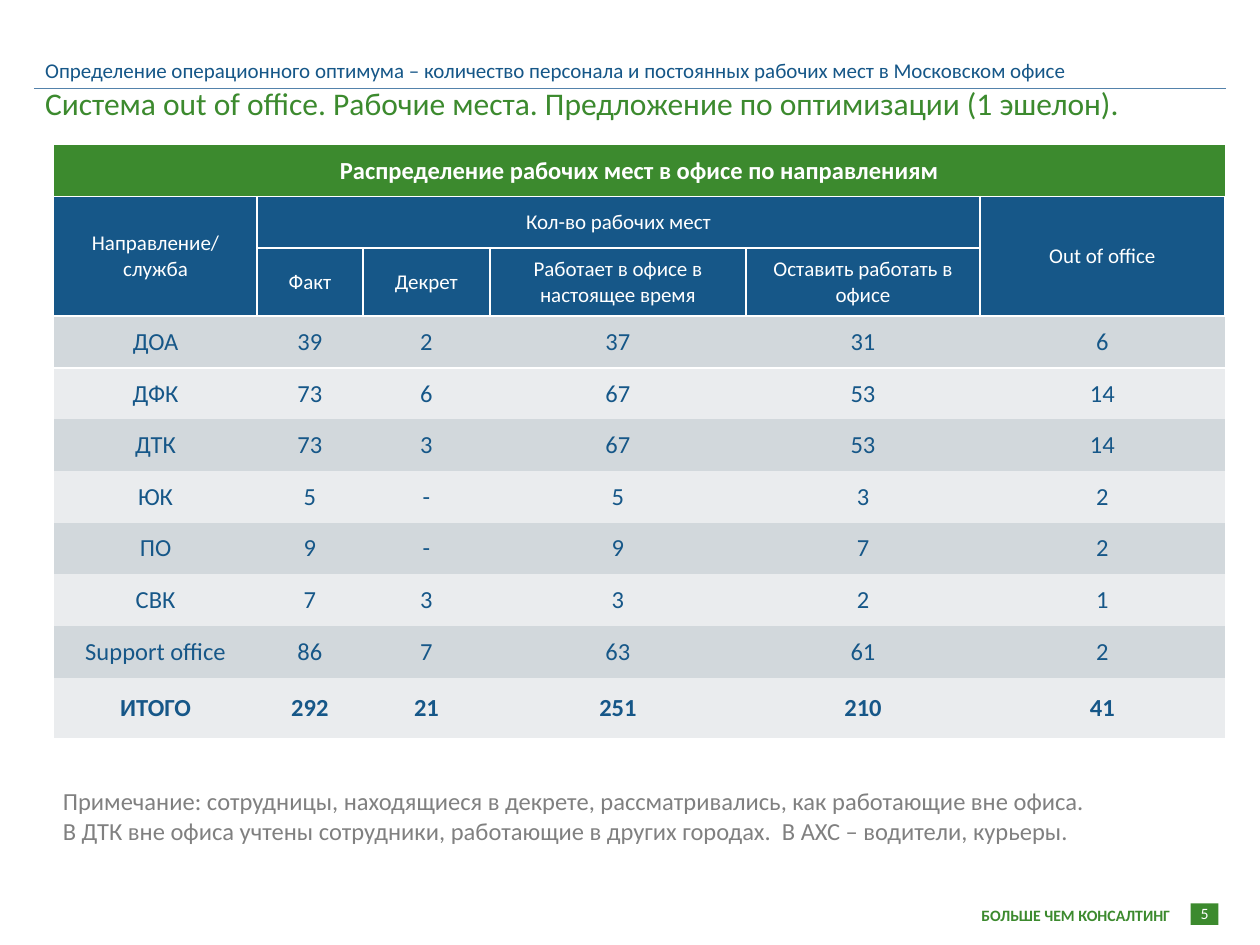
from lxml import etree
from pptx import Presentation, util as u
from pptx.dml.color import RGBColor
from pptx.enum import shapes, text
from pptx.oxml.ns import qn

THEME = {
    "font": "Calibri",
    "green": "3C8A2E", "blue": "165788", "rule": "5482AB", "grey": "808080",
    "white": "FFFFFF", "bands": ("D2D8DC", "EAECEE"),
    "title": 18, "body": 14, "label": 12, "foot": 9,
}
PLAIN = "{2D5ABB26-0587-4C30-8999-92F81FD0307C}"  # table style without grid

TOPIC = ("Определение операционного оптимума – количество персонала "
         "и постоянных рабочих мест в Московском офисе")
TITLE = "Система out of office. Рабочие места. Предложение по оптимизации (1 эшелон)."
NOTE = [
    "Примечание: сотрудницы, находящиеся в декрете, рассматривались, как работающие вне офиса.",
    "В ДТК вне офиса учтены сотрудники, работающие в других городах.  В АХС – водители, курьеры.",
]
SLOGAN = "БОЛЬШЕ ЧЕМ КОНСАЛТИНГ"
PAGE = "5"

COLS = [1.61, 0.84, 1.01, 2.03, 1.86, 1.94]
ROWS = [0.41, 0.41, 0.54] + [0.41] * 7 + [0.48]
HEAD = [
    ["Распределение рабочих мест в офисе по направлениям"] + [""] * 5,
    ["Направление/служба", "Кол-во рабочих мест", "", "", "", "Out of office"],
    ["", "Факт", "Декрет", "Работает в офисе в настоящее время",
     "Оставить работать в офисе", ""],
]
SPANS = [((0, 0), (0, 5)), ((1, 0), (2, 0)), ((1, 1), (1, 4)), ((1, 5), (2, 5))]
DATA = [
    ["ДОА", "39", "2", "37", "31", "6"],
    ["ДФК", "73", "6", "67", "53", "14"],
    ["ДТК", "73", "3", "67", "53", "14"],
    ["ЮК", "5", "-", "5", "3", "2"],
    ["ПО", "9", "-", "9", "7", "2"],
    ["СВК", "7", "3", "3", "2", "1"],
    ["Support office", "86", "7", "63", "61", "2"],
    ["ИТОГО", "292", "21", "251", "210", "41"],
]


def color(name):
    return RGBColor.from_string(THEME.get(name, name))


def write(frame, lines, size, tint, bold=False, align=text.PP_ALIGN.LEFT):
    for i, line in enumerate(lines):
        para = frame.add_paragraph() if i else frame.paragraphs[0]
        para.alignment = align
        run = para.add_run()
        run.text = line
        run.font.name = THEME["font"]
        run.font.size = u.Pt(THEME[size])
        run.font.bold = bold
        run.font.color.rgb = color(tint)


def add_text(slide, box, lines, size, tint, wrap=True, mid=False, **look):
    frame = slide.shapes.add_textbox(*map(u.Inches, box)).text_frame
    frame.word_wrap = wrap
    if mid:
        frame.vertical_anchor = text.MSO_ANCHOR.MIDDLE
    write(frame, lines, size, tint, **look)


def add_edge(cell, side):
    """Draw a white 1 pt border; call before the cell gets its fill."""
    props = cell._tc.get_or_add_tcPr()
    line = etree.SubElement(props, qn("a:ln" + side), w=str(u.Pt(1)))
    fill = etree.SubElement(line, qn("a:solidFill"))
    etree.SubElement(fill, qn("a:srgbClr"), val=THEME["white"])


def style(row):
    """Return fill, type size, type colour and weight of a table row."""
    if row == 0:
        return "green", "body", "white", True
    if row < len(HEAD):
        return "blue", "label", "white", False
    band = THEME["bands"][(row - len(HEAD)) % 2]
    return band, "body", "blue", row == len(ROWS) - 1


def add_grid(slide):
    size = (0.43, 1.15, sum(COLS), sum(ROWS))
    frame = slide.shapes.add_table(len(ROWS), len(COLS), *map(u.Inches, size))
    table = frame.table
    table._tbl.tblPr.find(qn("a:tableStyleId")).text = PLAIN
    table.first_row = table.horz_banding = False
    for col, width in zip(table.columns, COLS):
        col.width = u.Inches(width)
    for row, height in zip(table.rows, ROWS):
        row.height = u.Inches(height)
    for start, end in SPANS:
        table.cell(*start).merge(table.cell(*end))
    for r, words in enumerate(HEAD + DATA):
        fill, size, tint, bold = style(r)
        for c, word in enumerate(words):
            cell = table.cell(r, c)
            if cell.is_spanned:
                continue
            if c and 0 < r < len(HEAD):
                add_edge(cell, "L")
            if 0 < r <= len(HEAD):
                add_edge(cell, "T")
            cell.fill.solid()
            cell.fill.fore_color.rgb = color(fill)
            cell.vertical_anchor = text.MSO_ANCHOR.MIDDLE
            write(cell.text_frame, [word], size, tint, bold, text.PP_ALIGN.CENTER)


def add_frame(slide):
    """Add the page badge, the header rule and the slogan."""
    box = map(u.Inches, (9.45, 7.17, 0.22, 0.17))
    badge = slide.shapes.add_shape(shapes.MSO_SHAPE.RECTANGLE, *box)
    badge.shadow.inherit = False
    badge.fill.solid()
    badge.fill.fore_color.rgb = color("green")
    badge.line.fill.background()

    ends = map(u.Inches, (0.27, 0.7, 9.73, 0.7))
    rule = slide.shapes.add_connector(shapes.MSO_CONNECTOR.STRAIGHT, *ends)
    rule.line.color.rgb = color("rule")
    rule.line.width = u.Pt(0.5)
    etree.SubElement(rule._element.spPr, qn("a:effectLst"))

    add_text(slide, (7.69, 7.14, 1.72, 0.25), [SLOGAN], "foot", "green",
             wrap=False, bold=True)
    add_text(slide, (9.34, 7.05, 0.44, 0.4), [PAGE], "foot", "white",
             mid=True, align=text.PP_ALIGN.CENTER)


def main():
    deck = Presentation()
    deck.slide_width, deck.slide_height = u.Inches(10), u.Inches(7.5)
    slide = deck.slides.add_slide(deck.slide_layouts[6])
    add_frame(slide)
    add_text(slide, (0.26, 0.62, 9.45, 0.47), [TITLE], "title", "green")
    add_text(slide, (0.26, 0.41, 9.45, 0.47), [TOPIC], "label", "blue")
    add_grid(slide)
    add_text(slide, (0.4, 6.19, 8.39, 0.57), NOTE, "body", "grey", wrap=False)
    deck.save("out.pptx")


if __name__ == "__main__":
    main()
